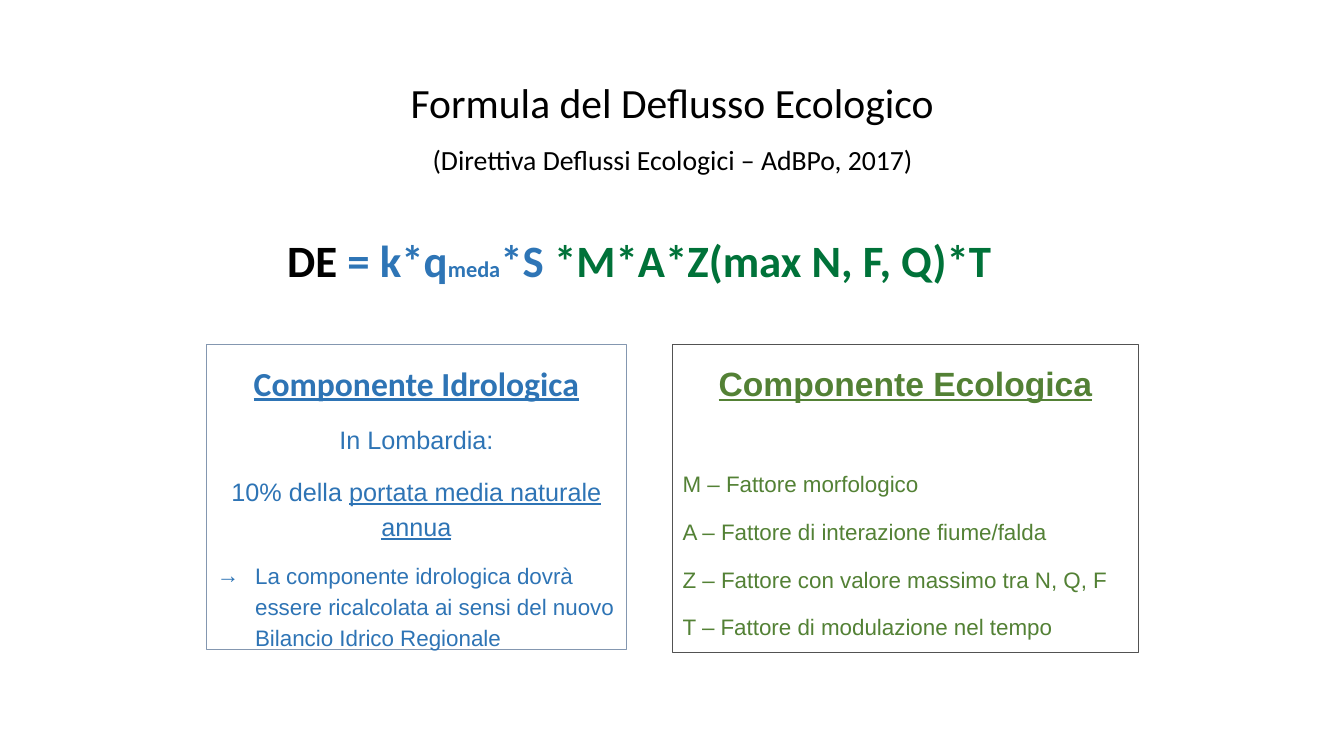
from lxml import etree
from pptx import Presentation
from pptx.dml.color import RGBColor
from pptx.enum.text import MSO_ANCHOR, MSO_AUTO_SIZE, PP_ALIGN
from pptx.oxml.ns import qn
from pptx.util import Inches, Pt

LEFT, CENTER = PP_ALIGN.LEFT, PP_ALIGN.CENTER
TOP, MIDDLE = MSO_ANCHOR.TOP, MSO_ANCHOR.MIDDLE
NO_AUTOFIT = MSO_AUTO_SIZE.NONE

TWO_CONTENT_LAYOUT = 3
BLACK, BLUE, FORMULA_BLUE = "000000", "2E74B5", "2E75B6"
GREEN, FORMULA_GREEN = "538135", "007239"


def color(hex_string):
    return RGBColor.from_string(hex_string)


def place(shape, left, top, width, height):
    shape.left, shape.top = Inches(left), Inches(top)
    shape.width, shape.height = Inches(width), Inches(height)


def add_run(paragraph, text, font="Arial", size=16, fill=BLACK, bold=False, underline=False):
    run = paragraph.add_run()
    run.text = text
    run.font.name = font
    run.font.size = Pt(size)
    run.font.color.rgb = color(fill)
    run.font.bold = bold
    run.font.underline = underline


def add_paragraph(frame, align=LEFT, spacing=1.15, before=6, after=6, bullet=None, indent=0):
    """Use the first paragraph while it is empty, then append new ones."""
    first = not frame.paragraphs[0].runs
    paragraph = frame.paragraphs[0] if first else frame.add_paragraph()
    properties = paragraph._p.get_or_add_pPr()
    properties.set("marL", str(Inches(indent)))
    properties.set("indent", str(-Inches(indent)))
    if bullet:
        etree.SubElement(properties, qn("a:buFont")).set("typeface", "Arial")
        etree.SubElement(properties, qn("a:buChar")).set("char", bullet)
    else:
        etree.SubElement(properties, qn("a:buNone"))
    paragraph.alignment = align
    paragraph.line_spacing = spacing
    paragraph.space_before = Pt(0 if first else before)
    paragraph.space_after = Pt(after)
    return paragraph


def prepare_frame(shape, anchor=TOP, top_inset=0.05):
    frame = shape.text_frame
    frame.word_wrap = True
    frame.auto_size = NO_AUTOFIT
    frame.vertical_anchor = anchor
    frame.margin_top = Inches(top_inset)
    return frame


def fill_title(title):
    place(title, 2.42, 0.72, 8.5, 0.82)
    frame = prepare_frame(title, MIDDLE)
    for text, size in (("Formula del Deflusso Ecologico", 29.7),
                       ("(Direttiva Deflussi Ecologici – AdBPo, 2017)", 19.8)):
        line = add_paragraph(frame, CENTER, spacing=1.5, before=0, after=0)
        add_run(line, text, font="Calibri", size=size)


def add_formula(slide):
    box = slide.shapes.add_textbox(Inches(2.75), Inches(2.26), Inches(7.84), Inches(0.64))
    formula = add_paragraph(prepare_frame(box), spacing=1.0, after=0)
    for text, size, fill in (("DE ", 32, BLACK),
                             ("= k*q", 32, FORMULA_BLUE),
                             ("meda", 16, FORMULA_BLUE),
                             ("*S ", 32, FORMULA_BLUE),
                             ("*M*A*Z(max N, F, Q)*T", 32, FORMULA_GREEN)):
        add_run(formula, text, font="Calibri", size=size, fill=fill, bold=True)


def start_component(body, bounds, border, heading, font, fill):
    place(body, *bounds)
    body.line.color.rgb = color(border)
    body.line.width = Pt(0.75)
    frame = prepare_frame(body, top_inset=0.12)
    add_run(add_paragraph(frame, CENTER), heading, font=font, size=24,
            fill=fill, bold=True, underline=True)
    return frame


def fill_hydrological(body):
    frame = start_component(body, (2.05, 3.42, 4.16, 3.02), "8497B0",
                            "Componente Idrologica", "Calibri", BLUE)
    add_run(add_paragraph(frame, CENTER), "In Lombardia:", size=18, fill=BLUE)
    share = add_paragraph(frame, CENTER)
    add_run(share, "10% della ", size=18, fill=BLUE)
    add_run(share, "portata media naturale annua", size=18, fill=BLUE, underline=True)
    outcome = add_paragraph(frame, bullet="→", indent=0.38)
    add_run(outcome, "La componente idrologica dovrà essere ricalcolata "
                     "ai sensi del nuovo Bilancio Idrico Regionale", fill=BLUE)


def fill_ecological(body):
    frame = start_component(body, (6.67, 3.42, 4.62, 3.05), "525252",
                            "Componente Ecologica", "Arial", GREEN)
    factors = ("M – Fattore morfologico",
               "A – Fattore di interazione fiume/falda",
               "Z – Fattore con valore massimo tra N, Q, F",
               "T – Fattore di modulazione nel tempo")
    for position, factor in enumerate(factors):
        # The list stands apart from its heading
        line = add_paragraph(frame, before=6 if position else 39)
        add_run(line, factor, fill=GREEN)


def main():
    presentation = Presentation()
    presentation.slide_width, presentation.slide_height = Inches(13.33), Inches(7.5)
    slide = presentation.slides.add_slide(presentation.slide_layouts[TWO_CONTENT_LAYOUT])

    # Title and formula
    fill_title(slide.shapes.title)
    add_formula(slide)

    # The two components of the formula
    fill_hydrological(slide.placeholders[1])
    fill_ecological(slide.placeholders[2])

    presentation.save("out.pptx")


if __name__ == "__main__":
    main()
